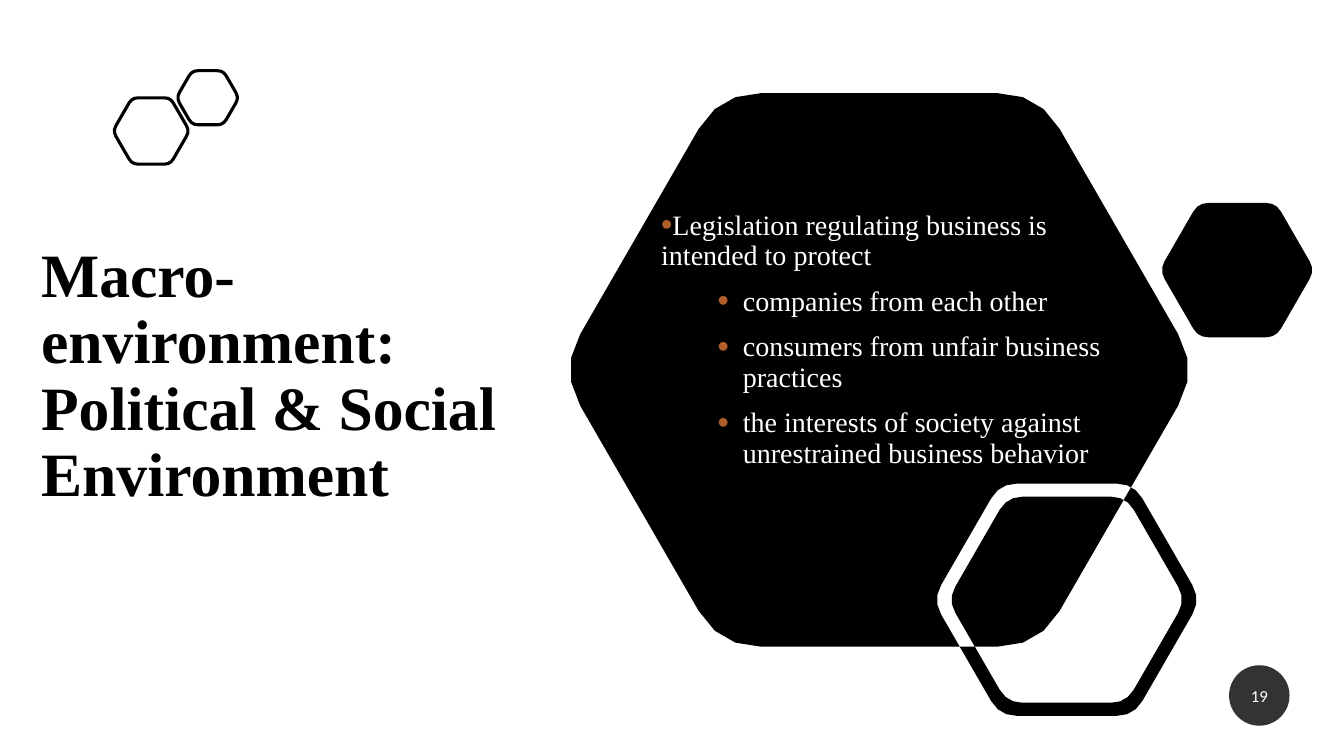
"""Build the slide on the political and social macro-environment."""
from math import cos, pi, sin

from lxml import etree
from pptx import Presentation
from pptx.dml.color import RGBColor
from pptx.enum.shapes import MSO_SHAPE
from pptx.enum.text import MSO_ANCHOR, PP_ALIGN
from pptx.oxml.ns import qn
from pptx.util import Inches, Pt

COLORS = {"black": "000000", "white": "FFFFFF", "bullet": "B15E28"}
SERIF = "Times New Roman"
CURVE_STEPS = 3


def rounded_hexagon(center_x, center_y, radius, cut):
    """Return the points of a regular hexagon whose corners are rounded."""
    corners = [(center_x + radius * cos(k * pi / 3), center_y + radius * sin(k * pi / 3))
               for k in range(6)]
    ratio = cut / radius
    points = []
    for k, (x, y) in enumerate(corners):
        (x0, y0), (x1, y1) = [(x + (nx - x) * ratio, y + (ny - y) * ratio)
                              for nx, ny in (corners[k - 1], corners[(k + 1) % 6])]
        for step in range(CURVE_STEPS + 1):
            t = step / CURVE_STEPS
            a, b, c = (1 - t) ** 2, 2 * t * (1 - t), t ** 2
            points.append((Inches(a * x0 + b * x + c * x1), Inches(a * y0 + b * y + c * y1)))
    return points


def add_hexagons(shapes, hexagons):
    """Draw hexagons as one freeform; areas that overlap cancel out."""
    builder = None
    for hexagon in hexagons:
        start, *rest = rounded_hexagon(*hexagon)
        if builder is None:
            builder = shapes.build_freeform(*start)
        else:
            builder.move_to(*start)
        builder.add_line_segments(rest, close=True)
    shape = builder.convert_to_shape()
    shape.shadow.inherit = False
    return shape


presentation = Presentation()
presentation.slide_width = Inches(13.33)
presentation.slide_height = Inches(7.5)
slide = presentation.slides.add_slide(presentation.slide_layouts[6])
colors = {name: RGBColor.from_string(value) for name, value in COLORS.items()}

title = slide.shapes.add_textbox(Inches(0.31), Inches(1.71), Inches(4.91), Inches(4.06))
title_frame = title.text_frame
title_frame.word_wrap = True
title_frame.vertical_anchor = MSO_ANCHOR.MIDDLE
title_frame.text = "Macro-environment: Political & Social Environment"
paragraph = title_frame.paragraphs[0]
paragraph.line_spacing = 0.9
font = paragraph.runs[0].font
font.name, font.size, font.bold = SERIF, Pt(44), True
font.color.rgb = colors["black"]

icon = slide.shapes.add_group_shape()
for hexagon in [(1.5, 1.3, 0.38, 0.06), (2.06, 0.97, 0.31, 0.06)]:
    outline = add_hexagons(icon.shapes, [hexagon])
    outline.fill.background()
    outline.line.color.rgb = colors["black"]
    outline.line.width = Pt(2.25)

large = (8.72, 3.67, 3.17, 0.41)
small = (12.27, 2.68, 0.77, 0.1)
ring_outer = (10.58, 5.95, 1.33, 0.17)
ring_inner = (10.58, 5.95, 1.18, 0.15)
backdrop = add_hexagons(slide.shapes, [large, small, ring_outer, ring_inner])
backdrop.fill.solid()
backdrop.fill.fore_color.rgb = colors["black"]
backdrop.line.fill.background()

body = slide.shapes.add_textbox(Inches(6.46), Inches(1.88), Inches(4.66), Inches(3.32))
body_frame = body.text_frame
body_frame.word_wrap = True
body_frame.vertical_anchor = MSO_ANCHOR.MIDDLE
body_frame.margin_bottom = Inches(0.38)
body_lines = [
    (0, "Legislation regulating business is intended to protect"),
    (1, "companies from each other"),
    (1, "consumers from unfair business practices"),
    (1, "the interests of society against unrestrained business behavior"),
]
body_frame.text = "\n".join(text for level, text in body_lines)
for paragraph, (level, text) in zip(body_frame.paragraphs, body_lines):
    paragraph.level = level
    paragraph.line_spacing = 0.9
    paragraph.space_before = Pt(5 * level)
    paragraph.space_after = Pt(6)
    properties = paragraph._p.get_or_add_pPr()
    properties.set("marL", str(Inches(0.81 * level)))
    properties.set("indent", str(Inches(-0.25)))
    bullet_color = etree.SubElement(properties, qn("a:buClr"))
    etree.SubElement(bullet_color, qn("a:srgbClr"), val=COLORS["bullet"])
    etree.SubElement(properties, qn("a:buSzPct"), val="115000")
    etree.SubElement(properties, qn("a:buFont"), typeface="Arial")
    etree.SubElement(properties, qn("a:buChar"), char="•")
    font = paragraph.runs[0].font
    font.name, font.size = SERIF, Pt(20)
    font.color.rgb = colors["white"]

badge = slide.shapes.add_shape(MSO_SHAPE.OVAL, Inches(12.19), Inches(6.6), Inches(0.6), Inches(0.6))
badge.shadow.inherit = False
badge.fill.solid()
badge.fill.fore_color.rgb = colors["black"]
badge_color = badge._element.spPr.find(qn("a:solidFill"))[0]
etree.SubElement(badge_color, qn("a:alpha"), val="80000")
badge.line.fill.background()
badge_frame = badge.text_frame
badge_frame.margin_left = badge_frame.margin_right = 0
badge_frame.vertical_anchor = MSO_ANCHOR.MIDDLE
badge_frame.text = "19"
paragraph = badge_frame.paragraphs[0]
paragraph.alignment = PP_ALIGN.CENTER
font = paragraph.runs[0].font
font.name, font.size = "Calibri", Pt(12)
font.color.rgb = colors["white"]

presentation.save("out.pptx")
